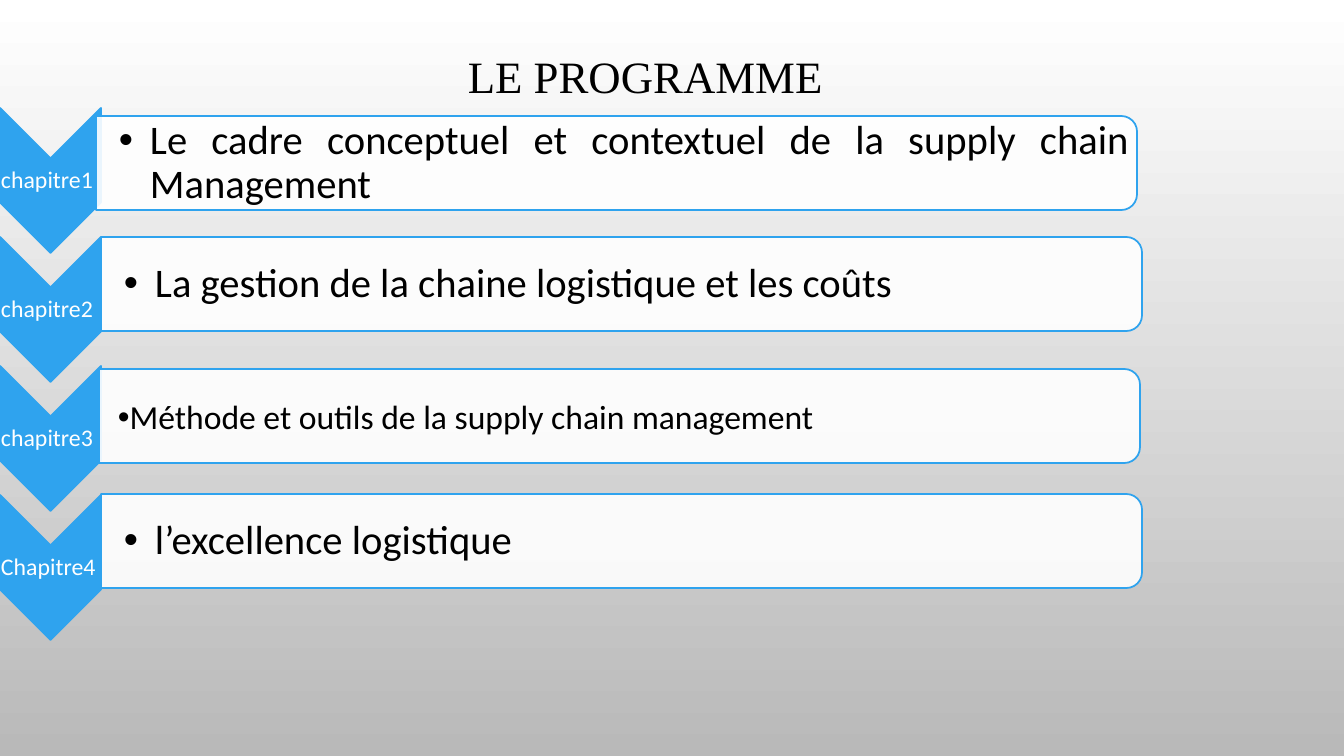
from dataclasses import dataclass
from lxml.etree import SubElement
from pptx import Presentation
from pptx.dml.color import RGBColor
from pptx.enum.shapes import MSO_SHAPE
from pptx.enum.text import MSO_ANCHOR, PP_ALIGN
from pptx.oxml.ns import qn
from pptx.util import Pt


@dataclass(frozen=True)
class Theme:
    blue: str = "2FA3EE"
    white: str = "FFFFFF"
    grey: str = "B9B9B9"
    black: str = "000000"
    serif: str = "Times New Roman"
    sans: str = "Calibri"
    title: int = 32
    item: int = 29
    small: int = 24
    label: int = 17
    edge: float = 1.25


THEME = Theme()
SCALE = 914400 / 100.8
STEP = 129

ROWS = [
    ("chapitre1", "Le cadre conceptuel et contextuel de la supply chain Management ",
     96, 116, THEME.item, 23, 31, 0.9),
    ("chapitre2", "La gestion de la chaine logistique et les coûts",
     101, 237, THEME.item, 23, 31, 0.9),
    ("chapitre3", "Méthode et outils de la supply chain management",
     99, 369, THEME.small, 19, 0, 1.0),
    ("Chapitre4", "l’excellence logistique",
     101, 494, THEME.item, 23, 31, 0.9),
]


def px(size):
    return round(size * SCALE)


def apply(target, values):
    for name, value in values.items():
        setattr(target, name, value)


def paint(slide):
    fill = slide.background.fill
    fill.gradient()
    fill.gradient_angle = 270
    for stop, tint, place in zip(fill.gradient_stops, (THEME.white, THEME.grey), (0, 1)):
        stop.color.rgb = RGBColor.from_string(tint)
        stop.position = place


def add_turned(slide, kind, box, tint, alpha=None):
    left, top, width, height = box
    shift = (width - height) / 2
    shape = slide.shapes.add_shape(
        kind, px(left + shift), px(top - shift), px(height), px(width))
    shape.rotation = 90
    shape.shadow.inherit = False
    shape.fill.solid()
    shape.fill.fore_color.rgb = RGBColor.from_string(tint)
    if alpha:
        color = shape.element.spPr.find(qn("a:solidFill")).find(qn("a:srgbClr"))
        SubElement(color, qn("a:alpha"), val=str(alpha * 1000))
    shape.line.color.rgb = RGBColor.from_string(THEME.blue)
    shape.line.width = Pt(THEME.edge)


def add_text(slide, text, box, font, size, tint, pads, align=PP_ALIGN.JUSTIFY,
             anchor=MSO_ANCHOR.MIDDLE, space=0.9, hang=None):
    frame = slide.shapes.add_textbox(*map(px, box)).text_frame
    left, top, right, bottom = map(px, pads)
    apply(frame, {
        "word_wrap": True, "vertical_anchor": anchor,
        "margin_left": left, "margin_top": top,
        "margin_right": right, "margin_bottom": bottom,
    })
    para = frame.paragraphs[0]
    apply(para, {"alignment": align, "line_spacing": space})
    if hang is not None:
        props = para._p.get_or_add_pPr()
        props.set("marL", str(px(hang)))
        props.set("indent", str(-px(hang)))
        SubElement(props, qn("a:buFont"), typeface="Arial")
        SubElement(props, qn("a:buChar"), char="•")
    run = para.add_run()
    run.text = text
    apply(run.font, {"name": font, "size": Pt(size)})
    run.font.color.rgb = RGBColor.from_string(tint)


def add_row(slide, index, row):
    label, text, left, top, size, pad, hang, space = row
    start = STEP * (index + 1)
    add_turned(slide, MSO_SHAPE.CHEVRON, (0, start - 21, 101, 145), THEME.blue)
    add_text(slide, label, (0, start + 30, 101, 43), THEME.sans, THEME.label,
             THEME.white, (1, 1, 1, 1))
    add_turned(slide, MSO_SHAPE.ROUND_2_SAME_RECTANGLE, (left, top, 1041, 94),
               THEME.white, 90)
    add_text(slide, text, (left, top + 5, 1036, 85), THEME.sans, size,
             THEME.black, (pad, 2, 2, 2), space=space, hang=hang)


def main():
    deck = Presentation()
    apply(deck, {"slide_width": px(1344), "slide_height": px(756)})
    slide = deck.slides.add_slide(deck.slide_layouts[6])
    paint(slide)
    add_text(slide, "LE PROGRAMME ", (151, 24, 1000, 84), THEME.serif, THEME.title,
             THEME.black, (10, 5, 10, 5), PP_ALIGN.CENTER, MSO_ANCHOR.BOTTOM)
    for index, row in enumerate(ROWS):
        add_row(slide, index, row)
    deck.save("out.pptx")


if __name__ == "__main__":
    main()
